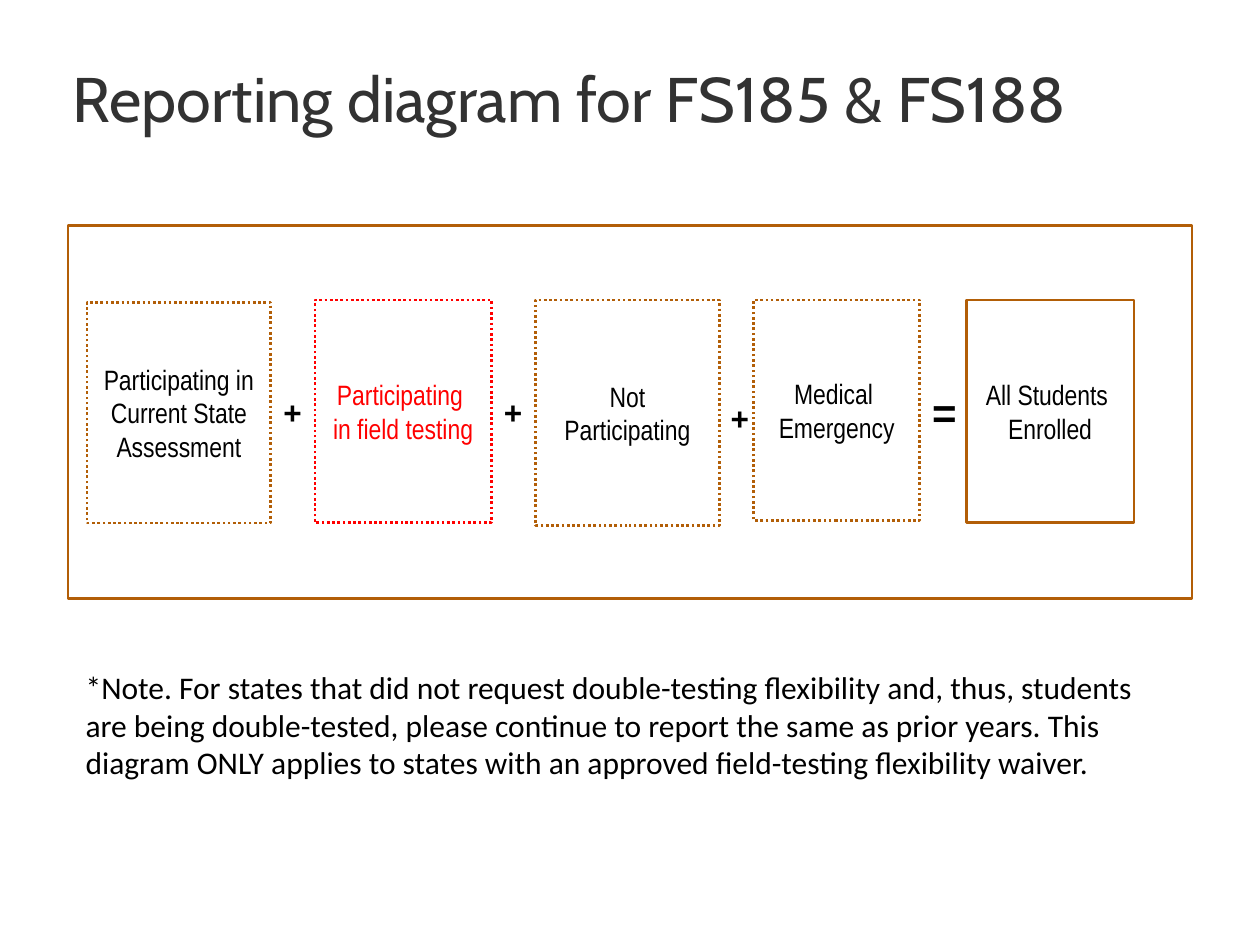
import pptx
import pptx.util
import pptx.dml.color
import pptx.enum.dml
import pptx.enum.shapes
import pptx.enum.text

Pt = pptx.util.Pt
Anchor = pptx.enum.text.MSO_ANCHOR
Align = pptx.enum.text.PP_ALIGN
DOTTED = pptx.enum.dml.MSO_LINE.ROUND_DOT

COLORS = {"title": "323232", "text": "000000", "brown": "B25E07", "red": "FF0000"}

TITLE = "Reporting diagram for FS185 & FS188"
NOTE = (
    "*Note. For states that did not request double-testing flexibility and, thus, "
    "students are being double-tested, please continue to report the same as prior "
    "years. This diagram ONLY applies to states with an approved field-testing "
    "flexibility waiver."
)

# text, (left, top, width, height), line colour, text colour, dotted
GROUPS = [
    ("Participating in Current State Assessment", (49.7, 172.8, 105.1, 126), "brown", "text", True),
    ("Participating \nin field testing", (180, 171.4, 100.8, 127.4), "red", "red", True),
    ("Not\nParticipating", (306, 171.4, 105.1, 128.9), "brown", "text", True),
    ("Medical \nEmergency", (430.6, 171.4, 95, 126), "brown", "text", True),
    ("All Students \nEnrolled", (552.2, 171.4, 95.8, 127.4), "brown", "text", False),
]

# sign, (left, top, width, height), size
OPERATORS = [
    ("+", (154.8, 221, 25.2, 28.8), 18),
    ("+", (280.8, 221, 25.2, 28.8), 18),
    ("+", (410.4, 224.6, 25.2, 28.8), 18),
    ("=", (525.6, 217.4, 28.8, 36.7), 24),
]


def rgb(name):
    return pptx.dml.color.RGBColor.from_string(COLORS[name])


def write(shape, text, font, size, color="text", bold=False, align=Align.LEFT):
    frame = shape.text_frame
    frame.text = text
    for paragraph in frame.paragraphs:
        paragraph.alignment = align
        for run in paragraph.runs:
            run.font.name = font
            run.font.size = Pt(size)
            run.font.bold = bold
            run.font.color.rgb = rgb(color)
    return frame


def add_box(slide, place, color, dotted=False):
    box = slide.shapes.add_shape(
        pptx.enum.shapes.MSO_SHAPE.RECTANGLE, *map(Pt, place))
    box.shadow.inherit = False
    box.fill.background()
    box.line.color.rgb = rgb(color)
    box.line.width = Pt(1.5)
    if dotted:
        box.line.dash_style = DOTTED
    return box


def add_text(slide, place, text, font, size, color="text", bold=False, wrap=True):
    label = slide.shapes.add_textbox(*map(Pt, place))
    frame = write(label, text, font, size, color, bold)
    frame.word_wrap = wrap
    return frame


def main():
    deck = pptx.Presentation()
    deck.slide_width, deck.slide_height = Pt(720), Pt(540)
    slide = deck.slides.add_slide(deck.slide_layouts[6])

    title = add_text(slide, (34.6, 30.2, 648, 50.4), TITLE, "Cabin", 36, "title")
    title.vertical_anchor = Anchor.BOTTOM

    add_box(slide, (38.9, 128.9, 642.2, 213.1), "brown")
    for text, place, line_color, text_color, dotted in GROUPS:
        group = add_box(slide, place, line_color, dotted)
        frame = write(group, text, "Arial Narrow", 16, text_color, align=Align.CENTER)
        frame.vertical_anchor = Anchor.MIDDLE
    for sign, place, size in OPERATORS:
        add_text(slide, place, sign, "Arial", size, bold=True, wrap=False)

    note = add_text(slide, (41.8, 378, 630, 72.7), NOTE, "Calibri", 18)
    note.auto_size = pptx.enum.text.MSO_AUTO_SIZE.SHAPE_TO_FIT_TEXT

    deck.save("out.pptx")


if __name__ == "__main__":
    main()
